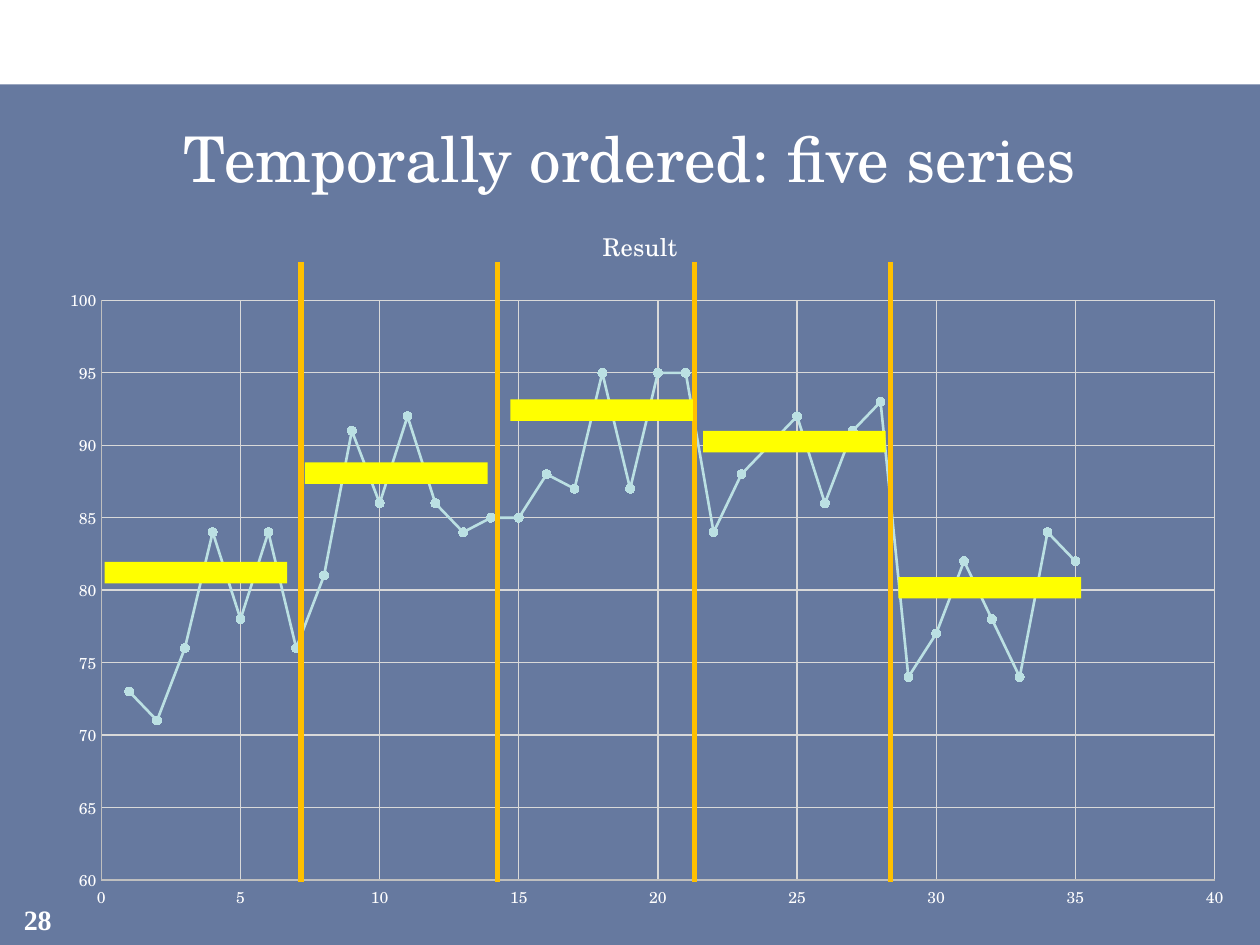
from dataclasses import dataclass

from lxml import etree
from pptx import Presentation
from pptx import oxml
from pptx import util as u
from pptx.chart.data import XyChartData
from pptx.dml.color import RGBColor
from pptx.enum import chart as ch
from pptx.enum import shapes, text
from pptx.oxml import ns

WHITE = RGBColor(0xFF, 0xFF, 0xFF)
NAVY = RGBColor(0x00, 0x20, 0x60)
AQUA = RGBColor(0xBB, 0xE0, 0xE3)
GRID = RGBColor(0xD9, 0xD9, 0xD9)
AXIS = RGBColor(0xBF, 0xBF, 0xBF)
AMBER = RGBColor(0xFF, 0xC0, 0x00)
YELLOW = RGBColor(0xFF, 0xFF, 0x00)
SERIF = "TeX Gyre Schola"

RESULTS = [
    73, 71, 76, 84, 78, 84, 76,
    81, 91, 86, 92, 86, 84, 85,
    85, 88, 87, 95, 87, 95, 95,
    84, 88, 90, 92, 86, 91, 93,
    74, 77, 82, 78, 74, 84, 82,
]


@dataclass
class MeanBar:
    left: float
    top: float


MEAN_BARS = [
    MeanBar(0.83, 4.46),
    MeanBar(2.42, 3.67),
    MeanBar(4.05, 3.17),
    MeanBar(5.58, 3.42),
    MeanBar(7.13, 4.58),
]
DIVIDERS = [2.39 + 1.56 * i for i in range(4)]


def box(left: float, top: float, width: float, height: float) -> tuple:
    return tuple(u.Inches(n) for n in (left, top, width, height))


def style_font(font, size: float, name: str = SERIF, bold: bool = False) -> None:
    font.size = u.Pt(size)
    font.name = name
    font.bold = bold
    font.color.rgb = WHITE


def add_rect(s, place: tuple, color: RGBColor):
    sp = s.shapes.add_shape(shapes.MSO_SHAPE.RECTANGLE, *place)
    sp.shadow.inherit = False
    sp.fill.solid()
    sp.fill.fore_color.rgb = color
    sp.line.fill.background()
    return sp


def add_divider(s, x: float) -> None:
    line = s.shapes.add_connector(
        shapes.MSO_CONNECTOR.STRAIGHT,
        u.Inches(x), u.Inches(2.08), u.Inches(x), u.Inches(7))
    line.line.color.rgb = AMBER
    line.line.width = u.Pt(3)
    etree.SubElement(line.element.spPr, ns.qn("a:effectLst"))


def style_axis(axis, low: float, high: float, step: float) -> None:
    axis.minimum_scale, axis.maximum_scale, axis.major_unit = low, high, step
    axis.major_tick_mark = axis.minor_tick_mark = ch.XL_TICK_MARK.NONE
    axis.has_major_gridlines = True
    for line, color in ((axis.format.line, AXIS),
                        (axis.major_gridlines.format.line, GRID)):
        line.color.rgb = color
        line.width = u.Pt(0.75)
    style_font(axis.tick_labels.font, 9)
    axis.tick_labels.number_format = "General"
    axis.tick_labels.number_format_is_linked = False


def fix_plot_area(chart, x: float, y: float, w: float, h: float) -> None:
    area = chart.element.find(".//" + ns.qn("c:plotArea"))
    old = area.find(ns.qn("c:layout"))
    if old is not None:
        area.remove(old)
    area.insert(0, oxml.parse_xml(
        f'<c:layout {ns.nsdecls("c")}><c:manualLayout>'
        '<c:layoutTarget val="inner"/><c:xMode val="edge"/><c:yMode val="edge"/>'
        f'<c:x val="{x}"/><c:y val="{y}"/><c:w val="{w}"/><c:h val="{h}"/>'
        '</c:manualLayout></c:layout>'))


def add_result_chart(s) -> None:
    data = XyChartData()
    points = data.add_series("Result")
    for run, result in enumerate(RESULTS, 1):
        points.add_data_point(run, result)
    chart = s.shapes.add_chart(
        ch.XL_CHART_TYPE.XY_SCATTER_LINES, *box(0.33, 1.58, 9.5, 5.75), data).chart
    style_font(chart.font, 10)
    chart.has_legend = False
    chart.has_title = True
    tf = chart.chart_title.text_frame
    tf.text = "Result"
    style_font(tf.paragraphs[0].runs[0].font, 14)
    chart.chart_title.include_in_layout = False
    style_axis(chart.category_axis, 0, 40, 5)
    style_axis(chart.value_axis, 60, 100, 5)
    fix_plot_area(chart, 0.05, 0.14, 0.93, 0.8)
    chart.plots[0].vary_by_categories = False

    series = chart.plots[0].series[0]
    series.smooth = False
    series.format.line.color.rgb = AQUA
    series.format.line.width = u.Pt(1.5)
    marker = series.marker
    marker.style = ch.XL_MARKER_STYLE.CIRCLE
    marker.size = 5
    marker.format.fill.solid()
    marker.format.fill.fore_color.rgb = AQUA
    marker.format.line.color.rgb = AQUA


def main() -> None:
    prs = Presentation()
    prs.slide_width, prs.slide_height = u.Inches(10), u.Inches(7.5)
    s = prs.slides.add_slide(prs.slide_layouts[5])

    title = s.shapes.title
    title.left, title.top, title.width, title.height = box(0.25, 0.83, 9.5, 0.83)
    tf = title.text_frame
    tf.text = "Temporally ordered: five series"
    tf.vertical_anchor = text.MSO_ANCHOR.MIDDLE
    p = tf.paragraphs[0]
    p.alignment = text.PP_ALIGN.CENTER
    style_font(p.runs[0].font, 36)

    backdrop = add_rect(s, box(0, 0.67, 10, 6.83), NAVY)
    color = backdrop.element.spPr.find(ns.qn("a:solidFill"))[0]
    etree.SubElement(color, ns.qn("a:alpha"), val="60000")
    title.element.addprevious(backdrop.element)

    number = s.shapes.add_textbox(*box(0, 7.1, 0.6, 0.4))
    tf = number.text_frame
    tf.word_wrap = True
    tf.text = "28"
    tf.vertical_anchor = text.MSO_ANCHOR.MIDDLE
    p = tf.paragraphs[0]
    p.alignment = text.PP_ALIGN.CENTER
    style_font(p.runs[0].font, 16, "Times New Roman", True)

    add_result_chart(s)
    for x in DIVIDERS:
        add_divider(s, x)
    for bar in MEAN_BARS:
        add_rect(s, box(bar.left, bar.top, 1.45, 0.17), YELLOW)

    prs.save("out.pptx")


if __name__ == "__main__":
    main()
